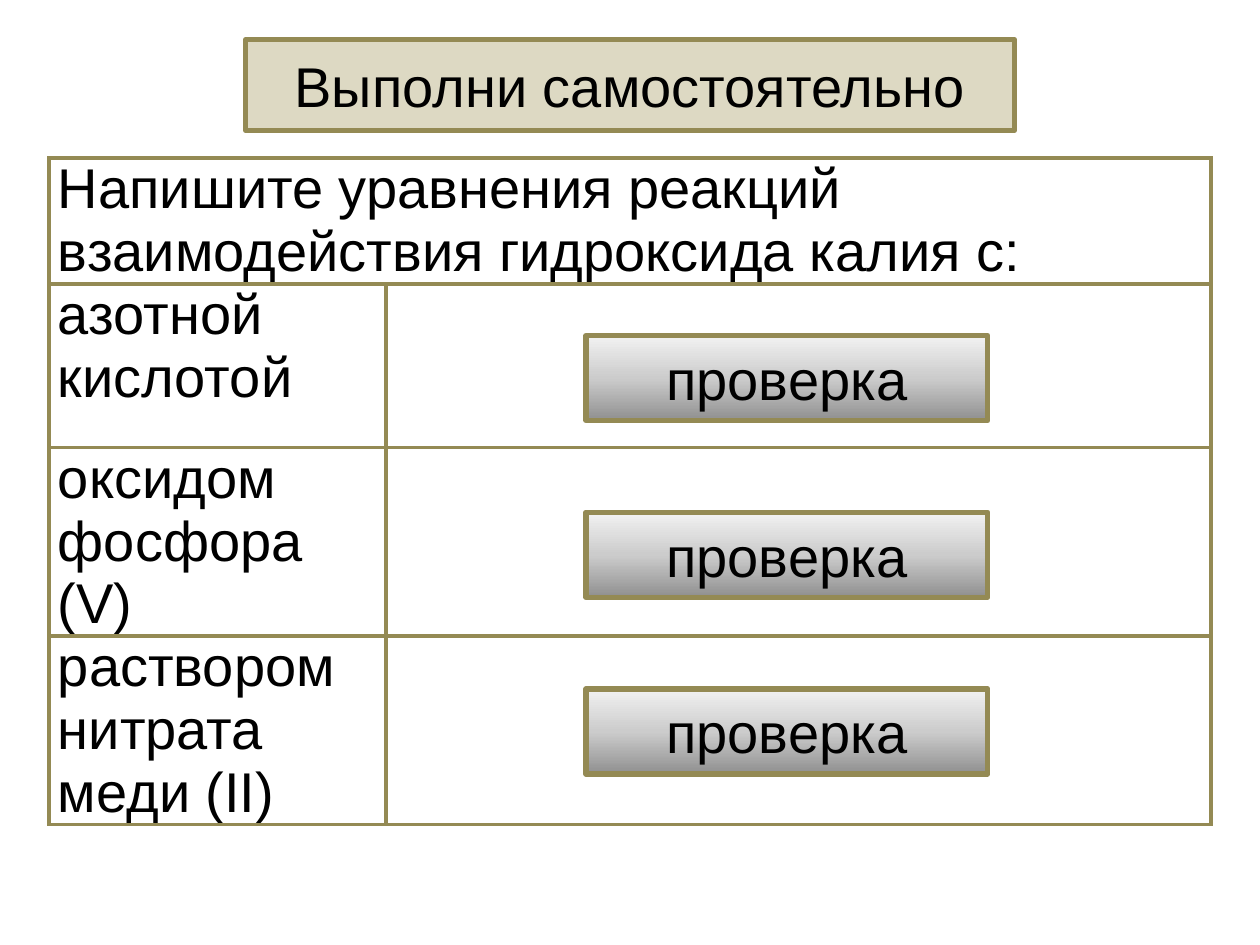
from copy import deepcopy

from lxml import etree
from pptx import Presentation
from pptx.dml.color import RGBColor
from pptx.enum.shapes import MSO_SHAPE
from pptx.enum.text import MSO_ANCHOR, PP_ALIGN
from pptx.oxml.ns import qn
from pptx.util import Inches, Pt

RECT = MSO_SHAPE.RECTANGLE
MIDDLE, TOP = MSO_ANCHOR.MIDDLE, MSO_ANCHOR.TOP
CENTER, LEFT = PP_ALIGN.CENTER, PP_ALIGN.LEFT

W, H = Inches(10), Inches(7.5)
OLIVE, SAND, BLACK = "948A54", "DDD9C3", "000000"
GREYS = ["909090", "CCCCCC", "F2F2F2"]
COL_SHARES = [0.29, 0.71]
ROW_HEIGHTS = [1, 1.3, 1.49, 1.49]
TASK = "Напишите уравнения реакций взаимодействия гидроксида калия с:"
REAGENTS = ["азотной кислотой", "оксидом фосфора (V)", "раствором нитрата меди (II)"]


def color(value):
    return RGBColor.from_string(value)


def box(x, y, w, h):
    return round(x * W), round(y * H), round(w * W), round(h * H)


def write(tf, text, size=32, font="Arial", fill=BLACK, align=LEFT):
    tf.word_wrap = True
    p = tf.paragraphs[0]
    p.alignment = align
    r = p.add_run()
    r.text = text
    r.font.size = Pt(size)
    r.font.name = font
    r.font.color.rgb = color(fill)


def outline(sp):
    sp.line.color.rgb = color(OLIVE)
    sp.line.width = Pt(3)


def add_title(s, area, text):
    sp = s.shapes.title
    sp.left, sp.top, sp.width, sp.height = area
    sp.fill.solid()
    sp.fill.fore_color.rgb = color(SAND)
    outline(sp)
    sp.text_frame.vertical_anchor = MIDDLE
    write(sp.text_frame, text, align=CENTER)


def format_cell(cell):
    cell.margin_left = cell.margin_right = Inches(0.07)
    cell.margin_top = cell.margin_bottom = 0
    cell.vertical_anchor = TOP
    cell.fill.background()
    tcPr = cell._tc.get_or_add_tcPr()
    for i, side in enumerate(("lnL", "lnR", "lnT", "lnB")):
        ln = etree.Element(qn(f"a:{side}"), w=str(Pt(2.25)))
        fill = etree.SubElement(ln, qn("a:solidFill"))
        etree.SubElement(fill, qn("a:srgbClr"), val=OLIVE)
        tcPr.insert(i, ln)


def add_task_table(s, area):
    table = s.shapes.add_table(len(ROW_HEIGHTS), len(COL_SHARES), *area).table
    table.first_row = table.horz_banding = False
    for col, share in zip(table.columns, COL_SHARES):
        col.width = round(area[2] * share)
    for row, height in zip(table.rows, ROW_HEIGHTS):
        row.height = round(area[3] * height / sum(ROW_HEIGHTS))
    for cell in table.iter_cells():
        format_cell(cell)
    table.cell(0, 0).merge(table.cell(0, 1))
    for i, text in enumerate([TASK, *REAGENTS]):
        write(table.cell(i, 0).text_frame, text)


def add_button(s, area, text):
    sp = s.shapes.add_shape(RECT, *area)
    sp.shadow.inherit = False
    sp.fill.gradient()
    sp.fill.gradient_angle = 90
    first = sp._element.spPr.find(".//" + qn("a:gs"))
    first.addnext(deepcopy(first))
    for i, stop in enumerate(sp.fill.gradient_stops):
        stop.position = i / 2
        stop.color.rgb = color(GREYS[i])
    outline(sp)
    sp.text_frame.vertical_anchor = MIDDLE
    write(sp.text_frame, text, align=CENTER)


def add_buttons(s, area, text, count):
    x, y, w, h = area
    button_h = round(0.09 * H)
    step = (h - button_h) / (count - 1)
    for i in range(count):
        add_button(s, (x, round(y + i * step), w, button_h), text)


def main():
    prs = Presentation()
    prs.slide_width, prs.slide_height = W, H
    s = prs.slides.add_slide(prs.slide_layouts[5])
    add_title(s, box(0.195, 0.042, 0.61, 0.096), "Выполни самостоятельно")
    add_task_table(s, box(0.039, 0.167, 0.922, 0.704))
    add_buttons(s, box(0.465, 0.355, 0.319, 0.464), "проверка", len(REAGENTS))
    prs.save("out.pptx")


if __name__ == "__main__":
    main()
